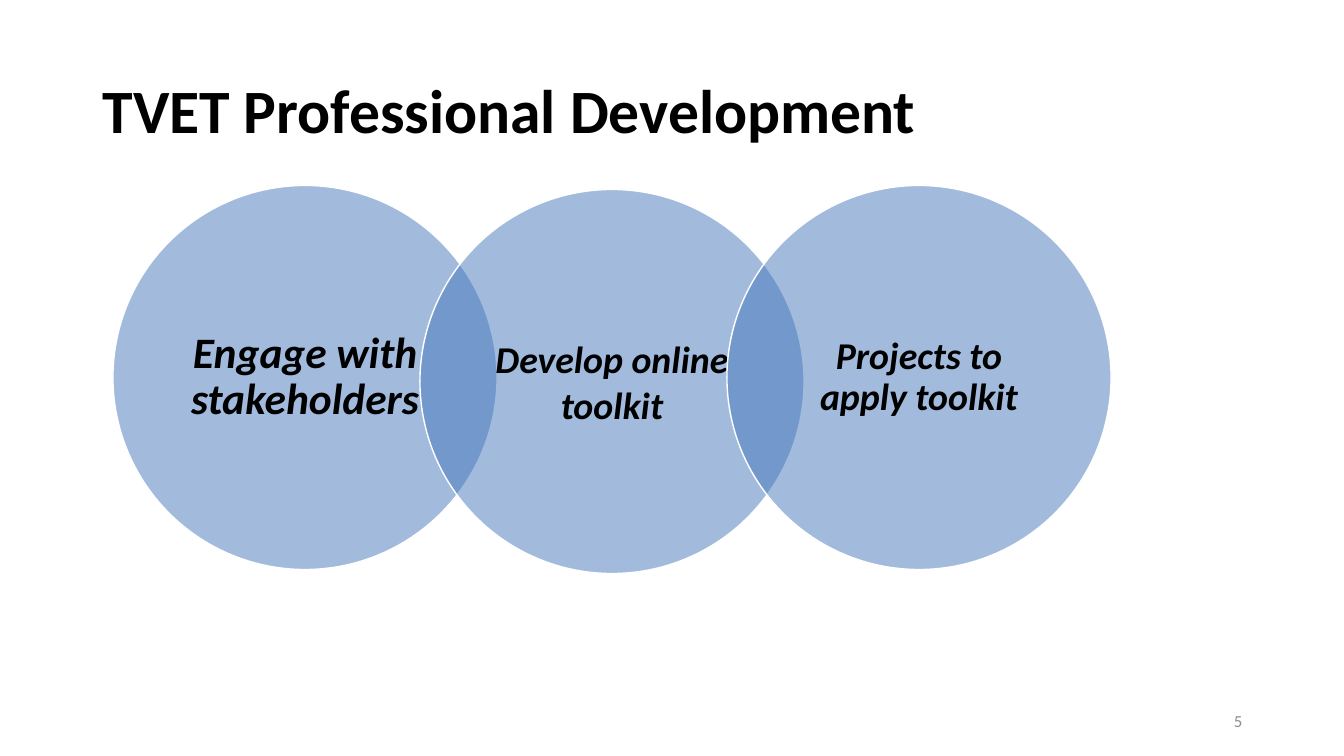
from pptx import Presentation
from pptx.dml.color import RGBColor
from pptx.enum.shapes import MSO_SHAPE
from pptx.enum.text import MSO_ANCHOR, PP_ALIGN
from pptx.oxml.ns import qn
from pptx.util import Inches, Pt
from lxml import etree

TITLE = "TVET Professional Development"
SLIDE_NUMBER = "5"
# label, font size, line spacing, circle top
STEPS = [
    ("Engage with stakeholders", 31, 0.9, 1.84),
    ("Develop online toolkit", 27, 1.0, 1.88),
    ("Projects to apply toolkit", 27, 0.9, 1.84),
]

FONT = "Calibri"
BLACK = RGBColor(0x00, 0x00, 0x00)
WHITE = RGBColor(0xFF, 0xFF, 0xFF)
GRAY = RGBColor(0x8C, 0x8C, 0x8C)
BLUE = RGBColor(0x46, 0x79, 0xBD)
OVAL = MSO_SHAPE.OVAL
MIDDLE = MSO_ANCHOR.MIDDLE
LEFT, CENTER, RIGHT = PP_ALIGN.LEFT, PP_ALIGN.CENTER, PP_ALIGN.RIGHT

CIRCLE_SIZE = 3.81
FIRST_CIRCLE_LEFT = 1.12
CIRCLE_STEP = 3.045


def write_text(shape, text, size, color, alignment, line_spacing=1.0, bold=False, italic=False):
    frame = shape.text_frame
    frame.word_wrap = True
    frame.vertical_anchor = MIDDLE
    paragraph = frame.paragraphs[0]
    paragraph.alignment = alignment
    paragraph.line_spacing = line_spacing
    run = paragraph.add_run()
    run.text = text
    run.font.name = FONT
    run.font.size = Pt(size)
    run.font.bold = bold
    run.font.italic = italic
    run.font.color.rgb = color


def add_text_box(slide, left, top, width, height, *text, **style):
    box = slide.shapes.add_textbox(Inches(left), Inches(top), Inches(width), Inches(height))
    write_text(box, *text, **style)


def add_circle(slide, left, top, label, size, line_spacing):
    """Add a half-transparent circle with its label inside."""
    circle = slide.shapes.add_shape(
        OVAL, Inches(left), Inches(top), Inches(CIRCLE_SIZE), Inches(CIRCLE_SIZE))
    circle.shadow.inherit = False
    circle.fill.solid()
    circle.fill.fore_color.rgb = BLUE
    color = circle.fill._xPr.find(qn("a:solidFill"))[0]
    etree.SubElement(color, qn("a:alpha")).set("val", "50000")
    circle.line.color.rgb = WHITE
    circle.line.width = Pt(1)
    frame = circle.text_frame
    frame.margin_left = frame.margin_right = Inches(0.17)
    frame.margin_top = frame.margin_bottom = Inches(0.04)
    write_text(circle, label, size, BLACK, CENTER, line_spacing, bold=True, italic=True)


def main():
    presentation = Presentation()
    presentation.slide_width = Inches(13.33)
    presentation.slide_height = Inches(7.5)
    slide = presentation.slides.add_slide(presentation.slide_layouts[6])

    add_text_box(slide, 0.92, 0.4, 11.5, 1.45, TITLE, 44, BLACK, LEFT,
                 line_spacing=0.9, bold=True)
    add_text_box(slide, 9.42, 6.95, 3, 0.4, SLIDE_NUMBER, 12, GRAY, RIGHT)
    for index, (label, size, line_spacing, top) in enumerate(STEPS):
        left = FIRST_CIRCLE_LEFT + index * CIRCLE_STEP
        add_circle(slide, left, top, label, size, line_spacing)

    presentation.save("out.pptx")


if __name__ == "__main__":
    main()
